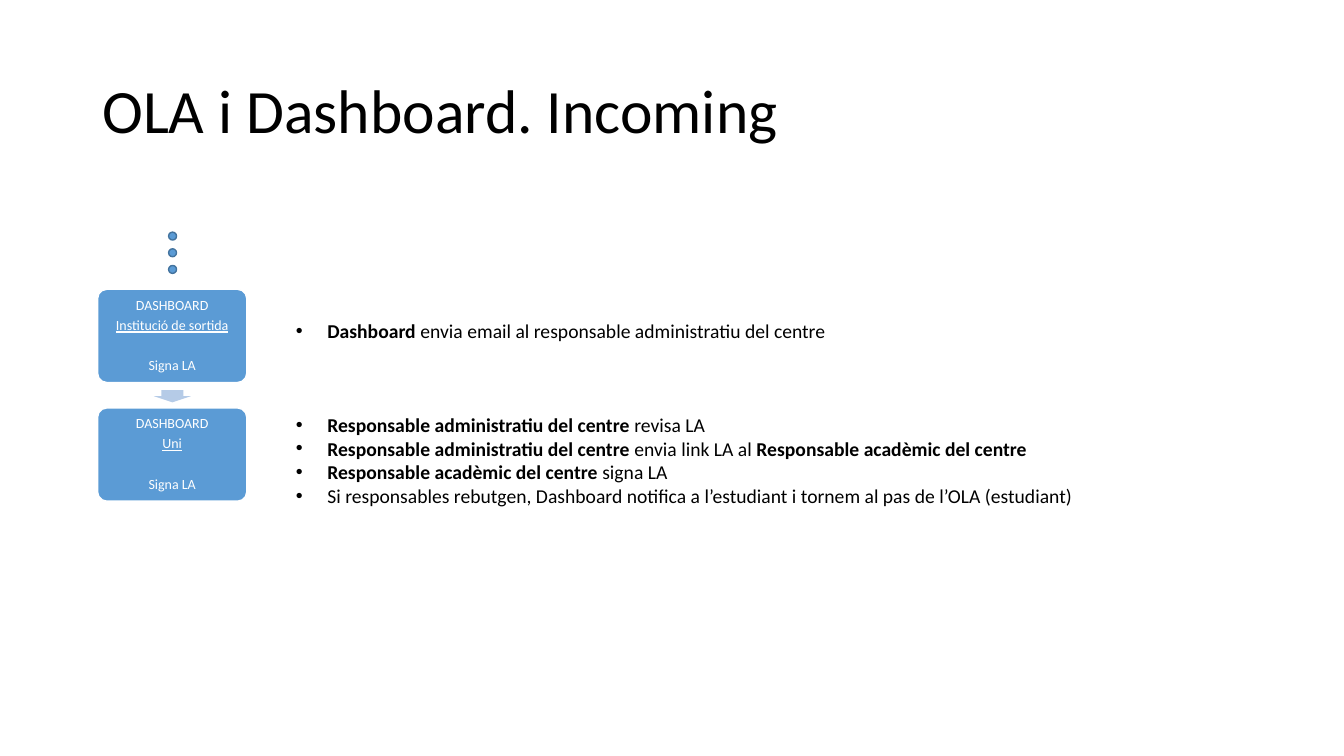
"""Build the slide on the incoming steps of OLA and Dashboard."""
import pptx
import pptx.dml.color
import pptx.enum.shapes
import pptx.enum.text
import pptx.util
from lxml import etree

Cm = pptx.util.Cm
Pt = pptx.util.Pt
RGBColor = pptx.dml.color.RGBColor
KIND = pptx.enum.shapes.MSO_SHAPE
ALIGN = pptx.enum.text.PP_ALIGN
MIDDLE = pptx.enum.text.MSO_ANCHOR.MIDDLE

BLUE = RGBColor(0x5B, 0x9B, 0xD5)
EDGE = RGBColor(0x43, 0x73, 0x9E)
PALE = RGBColor(0xB5, 0xCB, 0xE7)
WHITE = RGBColor(0xFF, 0xFF, 0xFF)
BLACK = RGBColor(0x00, 0x00, 0x00)

deck = pptx.Presentation()
deck.slide_width = Cm(33.87)
deck.slide_height = Cm(19.05)
slide = deck.slides.add_slide(deck.slide_layouts[6])


def style(run, size, color):
    run.font.name = "Calibri"
    run.font.size = Pt(size)
    run.font.color.rgb = color


def draw(kind, left, top, width, height, fill, line):
    shape = slide.shapes.add_shape(kind, Cm(left), Cm(top), Cm(width), Cm(height))
    shape.shadow.inherit = False
    shape.fill.solid()
    shape.fill.fore_color.rgb = fill
    if line is None:
        shape.line.fill.background()
    else:
        shape.line.color.rgb = line
        shape.line.width = Pt(1)
    return shape


title = slide.shapes.add_textbox(Cm(2.33), Cm(1.02), Cm(29.21), Cm(3.68))
frame = title.text_frame
frame.word_wrap = True
frame.vertical_anchor = MIDDLE
frame.text = "OLA i Dashboard. Incoming"
frame.paragraphs[0].line_spacing = 0.9
style(frame.paragraphs[0].runs[0], 44, BLACK)

for i in range(3):
    draw(KIND.OVAL, 4.25, 5.85 + 0.42 * i, 0.2, 0.2, BLUE, EDGE)

steps = [(7.29, "Institució de sortida"), (10.28, "Uni")]
for top, place in steps:
    box = draw(KIND.ROUNDED_RECTANGLE, 2.46, top, 3.76, 2.35, BLUE, WHITE)
    box.adjustments[0] = 0.1
    frame = box.text_frame
    frame.word_wrap = True
    frame.vertical_anchor = MIDDLE
    frame.margin_left = frame.margin_right = Cm(0.18)
    frame.margin_top = frame.margin_bottom = Cm(0.18)
    frame.text = "\n".join(["DASHBOARD", place, "Signa LA"])
    for para, gap in zip(frame.paragraphs, [0, 3.5, 18]):
        para.alignment = ALIGN.CENTER
        para.line_spacing = 0.9
        para.space_before = Pt(gap)
        style(para.runs[0], 10, WHITE)
    frame.paragraphs[1].runs[0].font.underline = True

arrow = draw(KIND.DOWN_ARROW, 3.88, 9.83, 0.93, 0.31, PALE, None)
arrow.adjustments[0] = 0.6
arrow.adjustments[1] = 0.5

ADMIN = "Responsable administratiu del centre"
HEAD = "Responsable acadèmic del centre"
notes = [
    (7.92, 0.86, [
        [("Dashboard", True),
         (" envia email al responsable administratiu del centre", False)],
    ]),
    (10.28, 3.25, [
        [(ADMIN, True), (" revisa LA", False)],
        [(ADMIN, True), (" envia link LA al ", False), (HEAD, True)],
        [(HEAD, True), (" signa LA", False)],
        [("Si responsables rebutgen, Dashboard notifica a l’estudiant "
          "i tornem al pas de l’OLA (estudiant)", False)],
    ]),
]
for top, height, lines in notes:
    note = slide.shapes.add_textbox(Cm(7.21), Cm(top), Cm(22.12), Cm(height))
    frame = note.text_frame
    frame.word_wrap = True
    for i, line in enumerate(lines):
        para = frame.add_paragraph() if i else frame.paragraphs[0]
        props = para._p.get_or_add_pPr()
        props.set("marL", str(Cm(0.79)))
        props.set("indent", str(-Cm(0.79)))
        font = etree.SubElement(props, pptx.oxml.ns.qn("a:buFont"))
        font.set("typeface", "Arial")
        mark = etree.SubElement(props, pptx.oxml.ns.qn("a:buChar"))
        mark.set("char", "•")
        for text, bold in line:
            run = para.add_run()
            run.text = text
            style(run, 14, BLACK)
            run.font.bold = bold

deck.save("out.pptx")
